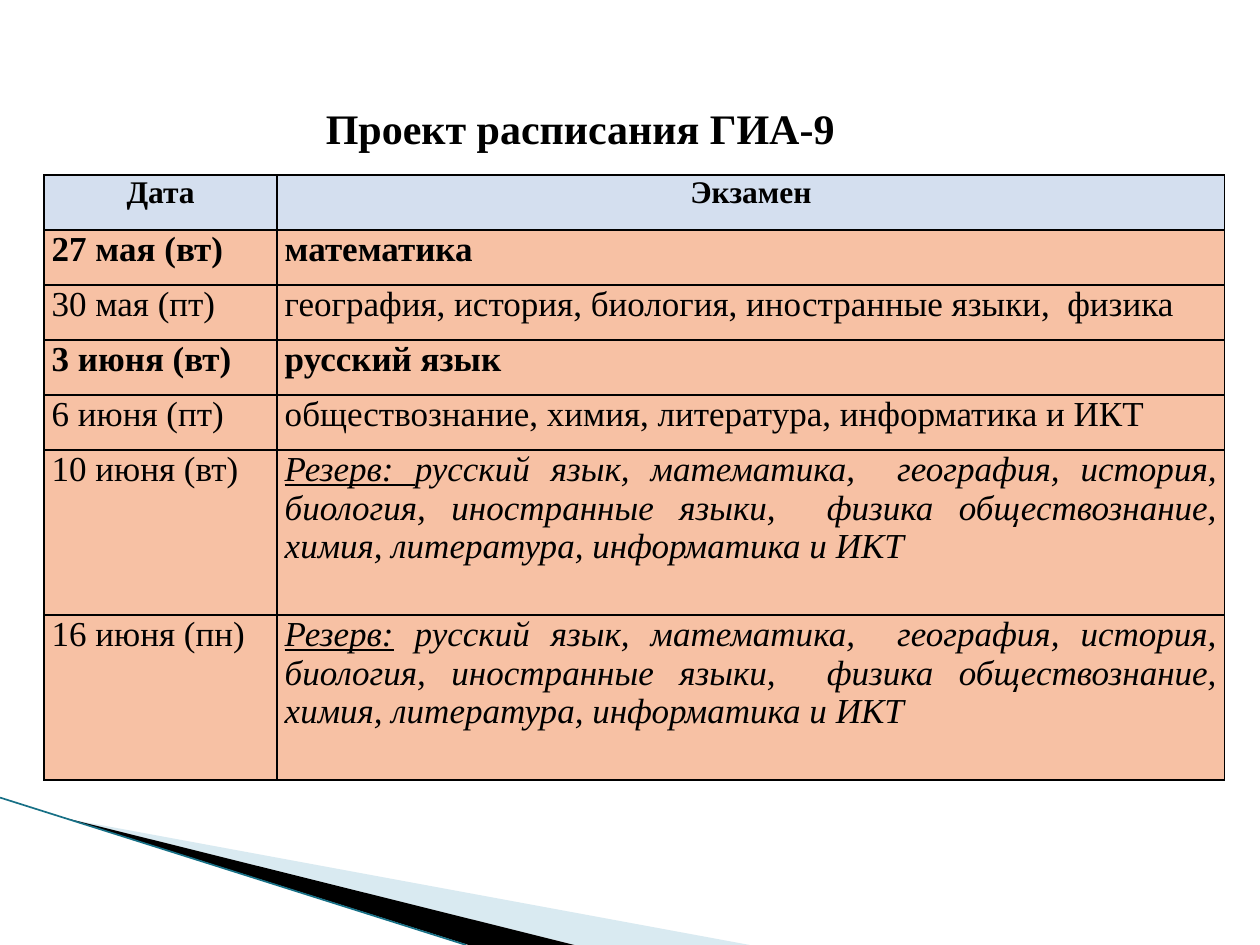
from typing import NamedTuple

from lxml.etree import SubElement
from pptx import Presentation
from pptx.dml.color import RGBColor
from pptx.enum.shapes import MSO_CONNECTOR
from pptx.enum.text import MSO_ANCHOR, PP_ALIGN
from pptx.oxml import parse_xml
from pptx.oxml.ns import nsdecls, qn
from pptx.util import Inches, Pt

BLACK = RGBColor(0x00, 0x00, 0x00)
HEAD = RGBColor(0xD4, 0xDF, 0xEF)
BODY = RGBColor(0xF7, 0xC1, 0xA4)
PALE = RGBColor(0xA0, 0xCB, 0xDC)
TEAL = RGBColor(0x17, 0x70, 0x86)
FONT = "Times New Roman"

WIDE, HIGH = Inches(10), Inches(7.5)
UNIT = Inches(4.8) / 11  # one grid row of the table
COLS = (Inches(1.85), Inches(7.52))
SUBJECTS = ("русский язык, математика,  география, история, биология, "
            "иностранные языки,  физика обществознание, химия, "
            "литература, информатика и ИКТ")


class Exam(NamedTuple):
    date: str
    text: str
    bold: bool = False
    lead: str = ""  # underlined opening of a reserve day
    span: int = 1   # height in grid rows


EXAMS = (
    Exam("27 мая (вт)", "математика", bold=True),
    Exam("30 мая (пт)",
         "география, история, биология, иностранные языки,  физика"),
    Exam("3 июня (вт)", "русский язык", bold=True),
    Exam("6 июня (пт)",
         "обществознание, химия, литература, информатика и ИКТ"),
    Exam("10 июня (вт)", SUBJECTS, lead="Резерв: ", span=3),
    Exam("16 июня (пн)", " " + SUBJECTS, lead="Резерв:", span=3),
)


def write(para, text: str, *, size: float = 20, bold: bool = False,
          slant: bool = False, under: bool = False,
          align=PP_ALIGN.LEFT) -> None:
    """Add one formatted run to a paragraph."""
    para.alignment = align
    run = para.add_run()
    run.text = text
    font = run.font
    font.name, font.size = FONT, Pt(size)
    font.bold, font.italic, font.underline = bold, slant, under
    font.color.rgb = BLACK


def style(cell, color: RGBColor):
    """Fill and frame a cell, and return its paragraph."""
    cell.margin_left = cell.margin_right = Inches(0.06)
    cell.margin_top = cell.margin_bottom = 0
    cell.vertical_anchor = MSO_ANCHOR.TOP
    cell.fill.solid()
    cell.fill.fore_color.rgb = color
    props = cell._tc.get_or_add_tcPr()
    for spot, side in enumerate("LRTB"):
        props.insert(spot, parse_xml(
            f'<a:ln{side} {nsdecls("a")} w="{Pt(1)}"><a:solidFill>'
            f'<a:srgbClr val="{BLACK}"/></a:solidFill></a:ln{side}>'))
    return cell.text_frame.paragraphs[0]


def wedge(slide, points: list[tuple[float, float]], color: RGBColor,
          alpha: int = 100) -> None:
    """Draw a filled outline through points given as shares of the slide."""
    spots = [(round(x * WIDE), round(y * HIGH)) for x, y in points]
    pen = slide.shapes.build_freeform(*spots[0])
    pen.add_line_segments(spots[1:], close=True)
    shape = pen.convert_to_shape()
    shape.shadow.inherit = False
    shape.line.fill.background()
    shape.fill.solid()
    shape.fill.fore_color.rgb = color
    if alpha < 100:
        tone = shape._element.spPr.find(".//" + qn("a:srgbClr"))
        SubElement(tone, qn("a:alpha")).set("val", str(alpha * 1000))


def decor(slide) -> None:
    """Draw the corner wedges and the line along them."""
    wedge(slide, [(0.055, 0.867), (0.595, 1), (0.456, 1)], PALE, 40)
    wedge(slide, [(0.053, 0.866), (0.456, 1 - 0.0), (0.372, 1)], BLACK)
    line = slide.shapes.add_connector(
        MSO_CONNECTOR.STRAIGHT, 0, round(0.844 * HIGH),
        round(0.37 * WIDE), HIGH)
    line.line.color.rgb = TEAL
    line.line.width = Pt(0.95)
    SubElement(line._element.spPr, qn("a:effectLst"))


def head(slide) -> None:
    """Place and write the title."""
    title = slide.shapes.title
    title.left, title.top = Inches(2.32), Inches(0.76)
    title.width, title.height = Inches(4.57), Inches(0.5)
    frame = title.text_frame
    frame.vertical_anchor = MSO_ANCHOR.TOP
    write(frame.paragraphs[0], "Проект расписания ГИА-9", size=24,
          bold=True, align=PP_ALIGN.CENTER)


def plan(slide) -> None:
    """Build the exam table."""
    spans = [1] + [exam.span for exam in EXAMS]
    table = slide.shapes.add_table(
        len(spans), len(COLS), Inches(0.35), Inches(1.39),
        sum(COLS), round(sum(spans) * UNIT)).table
    table.first_row = table.horz_banding = False
    for col, width in zip(table.columns, COLS):
        col.width = width
    for row, span in zip(table.rows, spans):
        row.height = round(span * UNIT)

    # Heading row
    for col, text in enumerate(("Дата", "Экзамен")):
        write(style(table.cell(0, col), HEAD), text, size=18, bold=True,
              align=PP_ALIGN.CENTER)

    # Exam days
    for row, exam in enumerate(EXAMS, 1):
        write(style(table.cell(row, 0), BODY), exam.date, bold=exam.bold)
        para = style(table.cell(row, 1), BODY)
        if exam.lead:
            write(para, exam.lead, slant=True, under=True)
        write(para, exam.text, bold=exam.bold, slant=bool(exam.lead),
              align=PP_ALIGN.JUSTIFY)


def main() -> None:
    deck = Presentation()
    deck.slide_width, deck.slide_height = WIDE, HIGH
    slide = deck.slides.add_slide(deck.slide_layouts[5])
    decor(slide)
    head(slide)
    plan(slide)
    deck.save("out.pptx")


if __name__ == "__main__":
    main()
